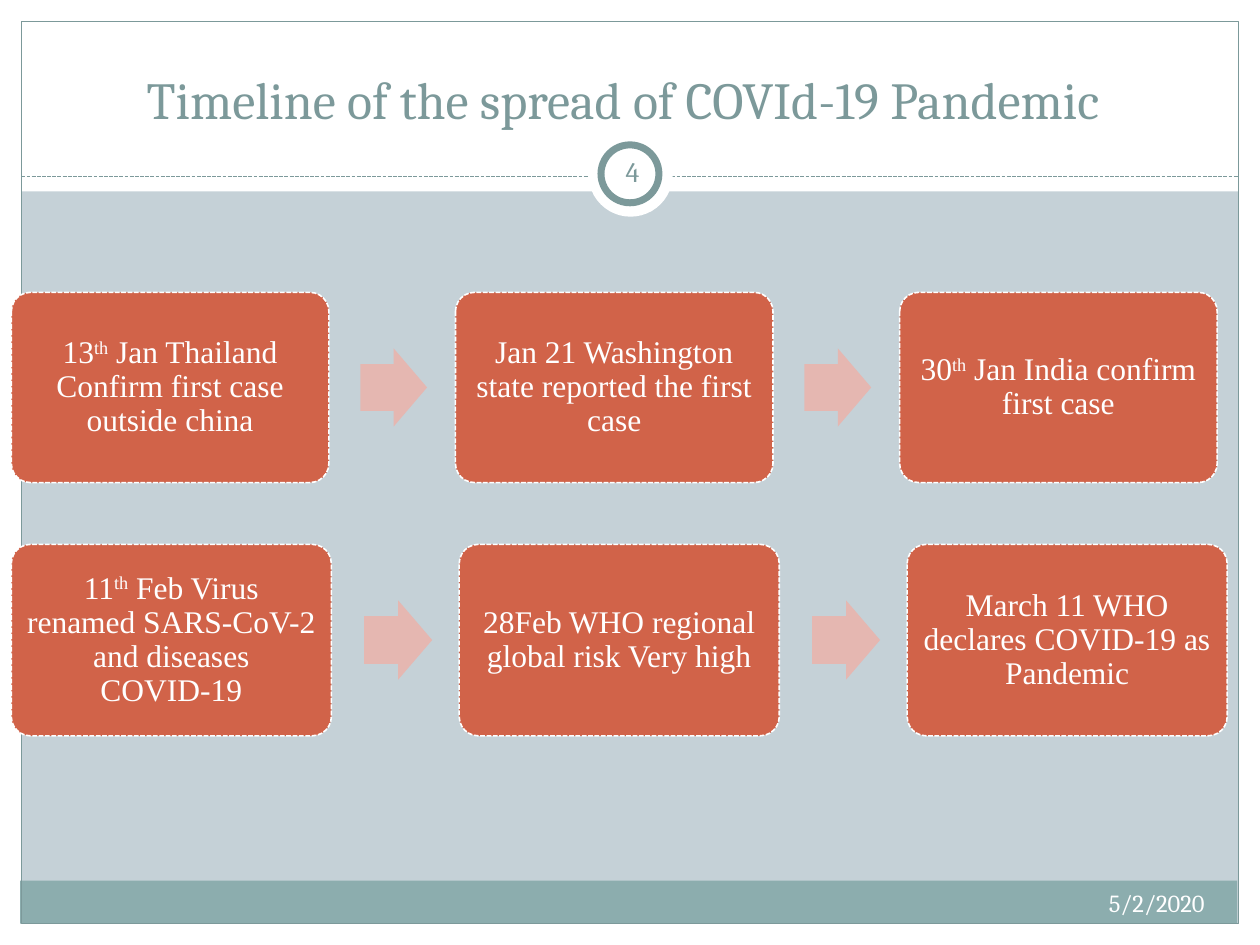
from pptx import Presentation
from pptx.dml.color import RGBColor
from pptx.enum import dml, shapes, text
from pptx.oxml import ns, xmlchemy
from pptx.util import Inches, Pt

COLORS = {
    "background": "C5D1D7",
    "white": "FFFFFF",
    "footer": "8CADAE",
    "accent": "7C999A",
    "card": "D16349",
    "arrow": "E5B7B1",
}
HEADING_FONT = "Cambria"
CARD_FONT = "Times New Roman"
ROWS = [
    {
        "top": 2.32, "width": 2.52, "height": 1.51, "pitch": 3.525,
        "arrow": (2.77, 0.53, 0.62),
        "cards": [
            ("13", "th", " Jan Thailand Confirm first case outside china"),
            ("Jan 21 Washington state reported the first case",),
            ("30", "th", " Jan India confirm first case"),
        ],
    },
    {
        "top": 4.32, "width": 2.54, "height": 1.52, "pitch": 3.555,
        "arrow": (2.8, 0.54, 0.63),
        "cards": [
            ("11", "th", " Feb Virus renamed SARS-CoV-2 and diseases COVID-19"),
            ("28Feb WHO regional global risk Very high",),
            ("March 11 WHO declares COVID-19 as Pandemic",),
        ],
    },
]


def color(name):
    return RGBColor.from_string(COLORS[name])


def style_line(line, name, width, dashed=False):
    line.color.rgb = color(name)
    line.width = Pt(width)
    if dashed:
        line.dash_style = dml.MSO_LINE.SQUARE_DOT


def add_shape(slide, kind, box, fill=None, line=None, width=0.75, dashed=False):
    shape = slide.shapes.add_shape(kind, *map(Inches, box))
    shape.shadow.inherit = False
    if fill:
        shape.fill.solid()
        shape.fill.fore_color.rgb = color(fill)
    else:
        shape.fill.background()
    if line:
        style_line(shape.line, line, width, dashed)
    else:
        shape.line.fill.background()
    return shape


def set_insets(frame, inset):
    frame.margin_left = frame.margin_right = Inches(inset)
    frame.margin_top = frame.margin_bottom = Inches(inset)


def format_run(run, font, size, name):
    run.font.name = font
    run.font.size = Pt(size)
    run.font.color.rgb = color(name)


def write_text(shape, content, size, name, alignment, anchor):
    frame = shape.text_frame
    frame.text = content
    frame.word_wrap = True
    frame.vertical_anchor = anchor
    paragraph = frame.paragraphs[0]
    paragraph.alignment = alignment
    format_run(paragraph.runs[0], HEADING_FONT, size, name)


def add_label(slide, box, *style):
    label = slide.shapes.add_textbox(*map(Inches, box))
    write_text(label, *style)
    return label


def add_frame(slide):
    rectangle = shapes.MSO_SHAPE.RECTANGLE
    for box in [(0, 7.33, 10, 0.17), (0, 0, 10, 1.52),
                (0, 0, 0.17, 7.5), (9.83, 0, 0.17, 7.5)]:
        add_shape(slide, rectangle, box, "white")
    add_shape(slide, rectangle, (0.16, 6.99, 9.66, 0.34), "footer")
    add_shape(slide, rectangle, (0.17, 0.17, 9.66, 7.16), line="accent")
    divider = slide.shapes.add_connector(
        shapes.MSO_CONNECTOR.STRAIGHT,
        Inches(0.17), Inches(1.4), Inches(9.83), Inches(1.4))
    style_line(divider.line, "accent", 0.75, True)
    divider._element.spPr.append(xmlchemy.OxmlElement("a:effectLst"))
    add_shape(slide, shapes.MSO_SHAPE.OVAL, (4.67, 1.05, 0.67, 0.67), "white")
    add_shape(slide, shapes.MSO_SHAPE.OVAL, (4.77, 1.15, 0.46, 0.46),
              "white", "accent", 4)


def add_title(slide):
    title = slide.shapes.title
    title.left, title.top = Inches(0.33), Inches(0.25)
    title.width, title.height = Inches(9.33), Inches(0.83)
    write_text(title, "Timeline of the spread of COVId-19 Pandemic ", 29.7, "accent",
               text.PP_ALIGN.CENTER, text.MSO_ANCHOR.BOTTOM)
    slide.shapes._spTree.append(title._element)


def add_card(slide, box, pieces):
    card = add_shape(slide, shapes.MSO_SHAPE.ROUNDED_RECTANGLE, box,
                     "card", "white", 0.9, True)
    card.adjustments[0] = 0.1
    frame = card.text_frame
    frame.word_wrap = True
    frame.vertical_anchor = text.MSO_ANCHOR.MIDDLE
    set_insets(frame, 0.07)
    paragraph = frame.paragraphs[0]
    paragraph.alignment = text.PP_ALIGN.CENTER
    paragraph.line_spacing = 0.9
    for piece in pieces:
        run = paragraph.add_run()
        run.text = piece
        format_run(run, CARD_FONT, 18, "white")
        if piece == "th":
            run._r.get_or_add_rPr().set("baseline", "30000")


def add_row(slide, row):
    arrow_offset, arrow_width, arrow_height = row["arrow"]
    arrow_top = row["top"] + (row["height"] - arrow_height) / 2
    for index, pieces in enumerate(row["cards"]):
        left = 0.09 + index * row["pitch"]
        add_card(slide, (left, row["top"], row["width"], row["height"]), pieces)
        if index < len(row["cards"]) - 1:
            arrow = add_shape(
                slide, shapes.MSO_SHAPE.RIGHT_ARROW,
                (left + arrow_offset, arrow_top, arrow_width, arrow_height), "arrow")
            arrow.adjustments[0] = 0.6
            arrow.adjustments[1] = 0.5


def main():
    presentation = Presentation()
    presentation.slide_width, presentation.slide_height = Inches(10), Inches(7.5)
    slide = presentation.slides.add_slide(presentation.slide_layouts[5])
    slide.background.fill.solid()
    slide.background.fill.fore_color.rgb = color("background")
    add_frame(slide)
    add_title(slide)
    for row in ROWS:
        add_row(slide, row)
    add_label(slide, (6.33, 7, 3.33, 0.4), "5/2/2020", 14, "white",
              text.PP_ALIGN.RIGHT, text.MSO_ANCHOR.TOP)
    number = add_label(slide, (4.77, 1.12, 0.5, 0.48), "4", 16, "accent",
                       text.PP_ALIGN.CENTER, text.MSO_ANCHOR.MIDDLE)
    set_insets(number.text_frame, 0.05)
    presentation.save("out.pptx")


if __name__ == "__main__":
    main()
